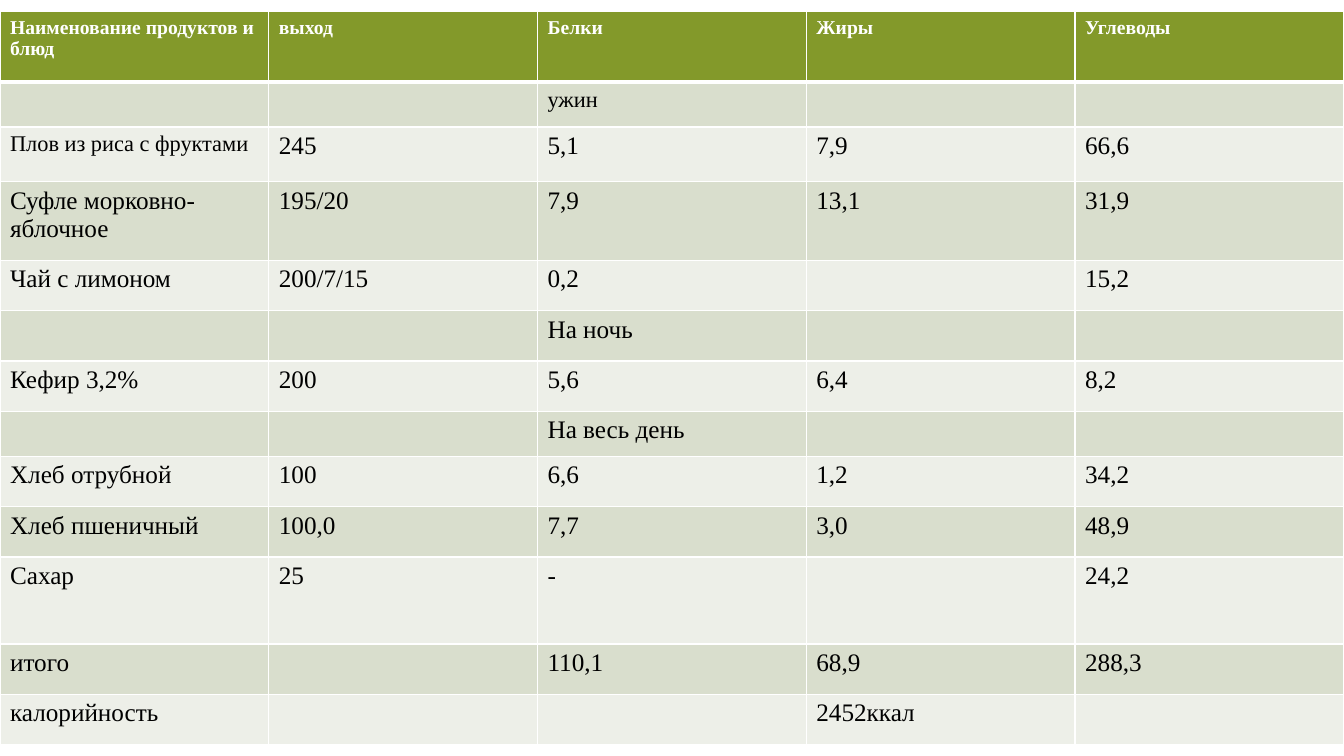
from dataclasses import dataclass

from lxml.etree import SubElement
from pptx import Presentation
from pptx.dml.color import RGBColor
from pptx.oxml.ns import qn
from pptx.util import Cm, Pt

HEADER = ("Наименование продуктов и блюд", "выход", "Белки", "Жиры", "Углеводы")
MENU = [
    ("", "", "ужин", "", ""),
    ("Плов из риса с фруктами", "245", "5,1", "7,9", "66,6"),
    ("Суфле морковно-яблочное", "195/20", "7,9", "13,1", "31,9"),
    ("Чай с лимоном", "200/7/15", "0,2", "", "15,2"),
    ("", "", "На ночь", "", ""),
    ("Кефир 3,2%", "200", "5,6", "6,4", "8,2"),
    ("", "", "На весь день", "", ""),
    ("Хлеб отрубной", "100", "6,6", "1,2", "34,2"),
    ("Хлеб пшеничный", "100,0", "7,7", "3,0", "48,9"),
    ("Сахар", "25", "-", "", "24,2"),
    ("итого", "", "110,1", "68,9", "288,3"),
    ("калорийность", "", "", "2452ккал", ""),
]
COMPACT_TEXTS = ("ужин", "Плов из риса с фруктами")
REGULAR_HEIGHT = 1.27
SPECIAL_HEIGHTS = {0: 1.78, 1: 1.13, 2: 1.38, 3: 1.98, 7: 1.13, 10: 2.19}
SLIDE_WIDTH, SLIDE_HEIGHT = 33.87, 19.05
TABLE_TOP = 0.29


@dataclass(frozen=True)
class Theme:
    font: str = "Times New Roman"
    header_size: int = 14
    compact_size: int = 16
    body_size: int = 18
    header_fill: str = "83992A"
    bands: tuple = ("EDEFE8", "D9DECD")
    header_text: str = "FFFFFF"
    body_text: str = "000000"
    border: str = "FFFFFF"
    thin: int = 1
    thick: int = 3


THEME = Theme()


def add_borders(cell, widths):
    properties = cell._tc.get_or_add_tcPr()
    for side, width in widths.items():
        line = SubElement(properties, qn(f"a:ln{side}"), w=str(Pt(width)))
        fill = SubElement(line, qn("a:solidFill"))
        SubElement(fill, qn("a:srgbClr"), val=THEME.border)


def format_cell(cell, text, row_index):
    is_header = row_index == 0
    widths = dict.fromkeys("LRTB", THEME.thin)
    if is_header:
        widths["B"] = THEME.thick
    elif row_index == 1:
        widths["T"] = THEME.thick
    add_borders(cell, widths)
    fill_color = THEME.header_fill if is_header else THEME.bands[row_index % 2]
    cell.fill.solid()
    cell.fill.fore_color.rgb = RGBColor.from_string(fill_color)

    cell.text_frame.text = text
    if is_header:
        size = THEME.header_size
    else:
        size = THEME.compact_size if text in COMPACT_TEXTS else THEME.body_size
    font = cell.text_frame.paragraphs[0].font
    for run in cell.text_frame.paragraphs[0].runs:
        font = run.font
    font.name = THEME.font
    font.size = Pt(size)
    font.bold = is_header
    font.color.rgb = RGBColor.from_string(THEME.header_text if is_header else THEME.body_text)


def add_menu_table(slide):
    rows = [HEADER, *MENU]
    heights = [SPECIAL_HEIGHTS.get(index, REGULAR_HEIGHT) for index in range(len(rows))]
    frame = slide.shapes.add_table(
        len(rows), len(HEADER), Cm(0), Cm(TABLE_TOP), Cm(SLIDE_WIDTH), Cm(sum(heights))
    )
    table = frame.table
    for column in table.columns:
        column.width = Cm(SLIDE_WIDTH / len(HEADER))
    for row_index, (texts, height) in enumerate(zip(rows, heights)):
        table.rows[row_index].height = Cm(height)
        for column_index, text in enumerate(texts):
            format_cell(table.cell(row_index, column_index), text, row_index)


def main():
    presentation = Presentation()
    presentation.slide_width = Cm(SLIDE_WIDTH)
    presentation.slide_height = Cm(SLIDE_HEIGHT)
    slide = presentation.slides.add_slide(presentation.slide_layouts[6])
    add_menu_table(slide)
    presentation.save("out.pptx")


if __name__ == "__main__":
    main()
